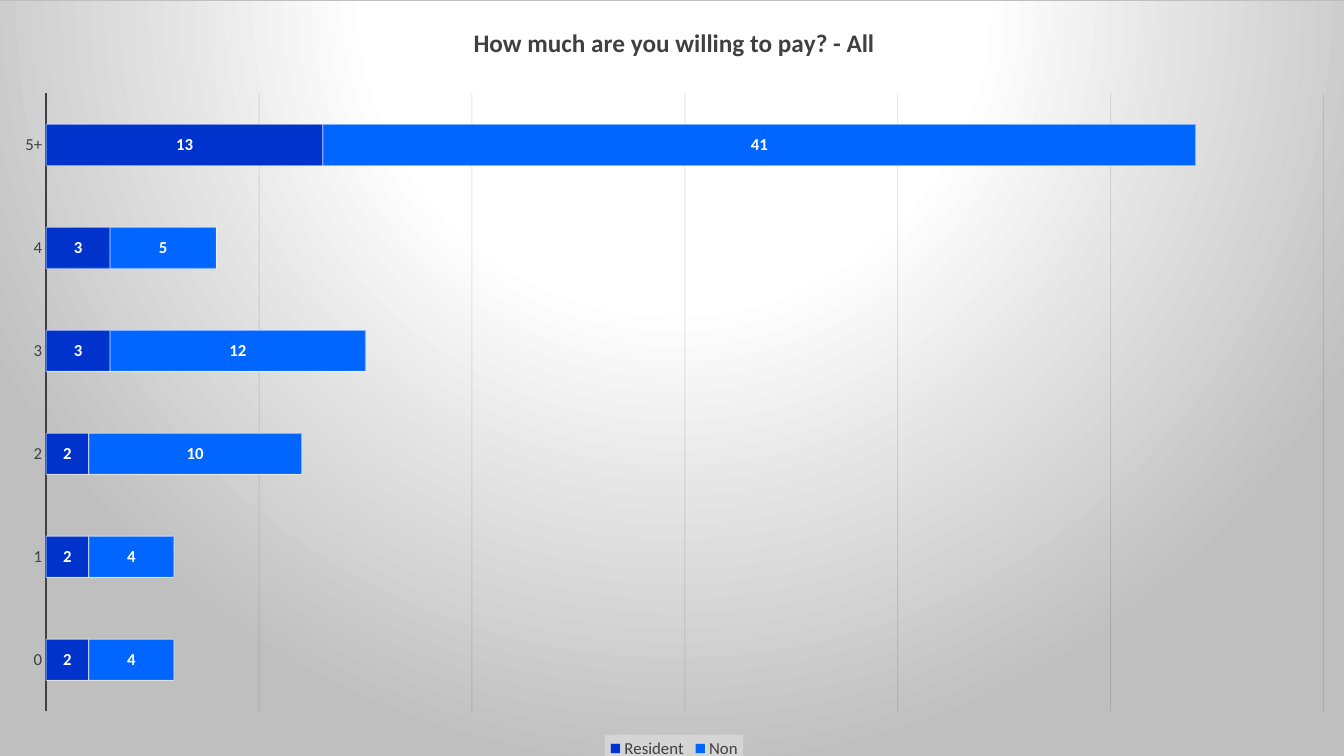
import pptx
import pptx.chart.data
import pptx.dml.color
import pptx.enum.chart
import pptx.oxml
import pptx.oxml.ns
import pptx.util
from pptx.util import Inches, Pt

COLORS = {
    "text": "404040",
    "grid": "0D0D0D",
    "resident": "0033CC",
    "non": "0066FF",
    "white": "FFFFFF",
    "edge": "BFBFBF",
    "legend": "F2F2F2",
}
CATEGORIES = ["0", "1", "2", "3", "4", "5+"]
SERIES = [
    ("Resident", [2, 2, 2, 3, 3, 13], "resident"),
    ("Non", [4, 4, 10, 12, 5, 41], "non"),
]
NS = pptx.oxml.ns.nsdecls("c", "a")


def rgb(name):
    return pptx.dml.color.RGBColor.from_string(COLORS[name])


def set_font(font, size, color, bold=False):
    font.name = "Calibri"
    font.size = Pt(size)
    font.bold = bold
    font.color.rgb = rgb(color)


def set_line(line, color, width, alpha=None):
    line.color.rgb = rgb(color)
    line.width = Pt(width)
    if alpha:
        clr = line.fill._xPr.find(".//" + pptx.oxml.ns.qn("a:srgbClr"))
        clr.append(pptx.oxml.parse_xml(f'<a:alpha {NS} val="{alpha * 1000}"/>'))


def set_background(chart):
    stops = "".join(
        f'<a:gs pos="{pos * 1000}"><a:srgbClr val="{COLORS[name]}"/></a:gs>'
        for pos, name in [(0, "white"), (39, "white"), (100, "edge")]
    )
    chart._chartSpace.chart.addnext(pptx.oxml.parse_xml(
        f'<c:spPr {NS}><a:gradFill><a:gsLst>{stops}</a:gsLst>'
        '<a:path path="circle"><a:fillToRect l="50000" t="-80000" r="50000" b="180000"/></a:path>'
        f'</a:gradFill><a:ln w="{Pt(0.75)}"><a:solidFill><a:srgbClr val="{COLORS["edge"]}"/>'
        '</a:solidFill></a:ln></c:spPr>'))


def set_plot_layout(chart, x, y, w, h):
    area = chart._chartSpace.chart.plotArea
    for old in area.findall(pptx.oxml.ns.qn("c:layout")):
        area.remove(old)
    area.insert(0, pptx.oxml.parse_xml(
        f'<c:layout {NS}><c:manualLayout><c:layoutTarget val="inner"/>'
        '<c:xMode val="edge"/><c:yMode val="edge"/>'
        f'<c:x val="{x}"/><c:y val="{y}"/><c:w val="{w}"/><c:h val="{h}"/>'
        '</c:manualLayout></c:layout>'))


def add_title(chart, text):
    chart.has_title = True
    tf = chart.chart_title.text_frame
    tf.text = text
    set_font(tf.paragraphs[0].font, 18, "text", True)
    chart.chart_title.include_in_layout = False


def add_legend(chart):
    chart.has_legend = True
    legend = chart.legend
    legend.position = pptx.enum.chart.XL_LEGEND_POSITION.BOTTOM
    legend.include_in_layout = False
    set_font(legend.font, 12, "text")
    overlay = legend._element.find(pptx.oxml.ns.qn("c:overlay"))
    overlay.addnext(pptx.oxml.parse_xml(
        f'<c:spPr {NS}><a:solidFill><a:srgbClr val="{COLORS["legend"]}">'
        '<a:alpha val="39000"/></a:srgbClr></a:solidFill><a:ln><a:noFill/></a:ln></c:spPr>'))


def format_axes(chart):
    tick = pptx.enum.chart.XL_TICK_MARK.NONE
    cat = chart.category_axis
    cat.major_tick_mark = cat.minor_tick_mark = tick
    cat.has_major_gridlines = False
    set_font(cat.tick_labels.font, 12, "text")
    set_line(cat.format.line, "text", 1.5)
    val = chart.value_axis
    val.minimum_scale, val.maximum_scale, val.major_unit = 0, 60, 10
    val.has_major_gridlines = True
    set_line(val.major_gridlines.format.line, "grid", 0.75, 10)
    val.visible = False


def format_series(series, color):
    series.format.fill.solid()
    series.format.fill.fore_color.rgb = rgb(color)
    set_line(series.format.line, "white", 0.75, 50)
    labels = series.data_labels
    labels.show_value = True
    labels.position = pptx.enum.chart.XL_LABEL_POSITION.CENTER
    set_font(labels.font, 12, "white", True)


def add_bar_chart(slide):
    data = pptx.chart.data.CategoryChartData()
    data.categories = CATEGORIES
    for name, values, _ in SERIES:
        data.add_series(name, values)
    chart = slide.shapes.add_chart(
        pptx.enum.chart.XL_CHART_TYPE.BAR_STACKED,
        Inches(-0.03), Inches(0), Inches(13.43), Inches(7.57), data).chart
    set_font(chart.font, 10, "text")
    plot = chart.plots[0]
    plot.gap_width, plot.overlap, plot.vary_by_categories = 150, 100, False
    for series, (_, _, color) in zip(plot.series, SERIES):
        format_series(series, color)
    format_axes(chart)
    add_title(chart, "How much are you willing to pay? - All")
    add_legend(chart)
    set_plot_layout(chart, 0.036, 0.122, 0.944, 0.811)
    set_background(chart)


def main():
    prs = pptx.Presentation()
    prs.slide_width, prs.slide_height = Inches(13.33), Inches(7.5)
    slide = prs.slides.add_slide(prs.slide_layouts[6])
    add_bar_chart(slide)
    prs.save("out.pptx")


if __name__ == "__main__":
    main()
